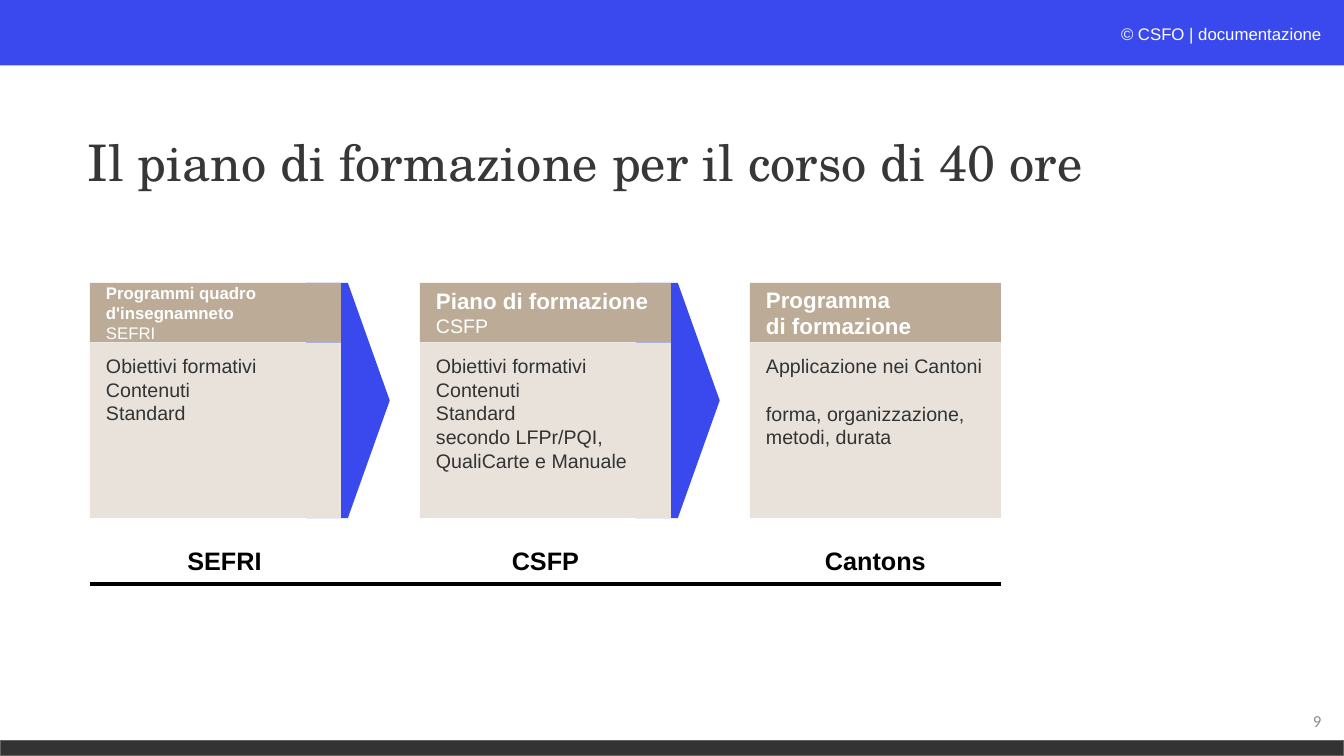
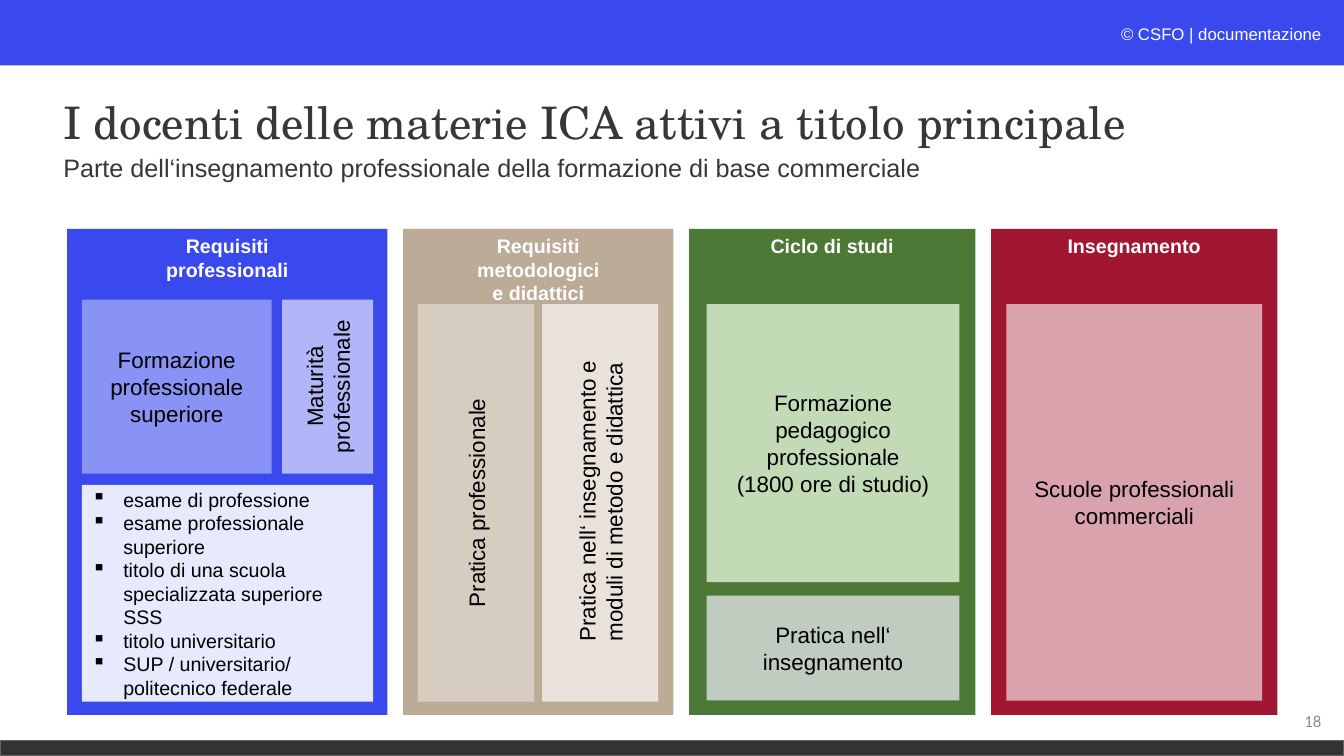
from dataclasses import dataclass, field
from typing import Any, Optional

import lxml.etree
import pptx
import pptx.dml.color
import pptx.enum.shapes
import pptx.enum.text
import pptx.oxml.ns
import pptx.util

Pt = pptx.util.Pt
RGB = pptx.dml.color.RGBColor
SHAPE = pptx.enum.shapes.MSO_SHAPE
ALIGN = pptx.enum.text.PP_ALIGN
ANCHOR = pptx.enum.text.MSO_ANCHOR
qn = pptx.oxml.ns.qn

# Colours
BLUE = RGB(0x3A, 0x49, 0xEE)
BLUE_MID = RGB(0x89, 0x92, 0xF5)
BLUE_SOFT = RGB(0xB0, 0xB6, 0xF8)
BLUE_PALE = RGB(0xE7, 0xE9, 0xFD)
SAND = RGB(0xBC, 0xAB, 0x96)
SAND_SOFT = RGB(0xD6, 0xCC, 0xBF)
SAND_PALE = RGB(0xE8, 0xE2, 0xDB)
GREEN = RGB(0x4C, 0x79, 0x36)
GREEN_SOFT = RGB(0xC2, 0xDA, 0xB6)
GREEN_GREY = RGB(0xC0, 0xCC, 0xBF)
RED = RGB(0xA1, 0x17, 0x31)
RED_SOFT = RGB(0xDA, 0xA2, 0xAD)
DARK = RGB(0x33, 0x33, 0x33)
DARK_EDGE = RGB(0x66, 0x63, 0x60)
TITLE_GREY = RGB(0x37, 0x37, 0x37)
NUMBER_GREY = RGB(0x8C, 0x8C, 0x8C)
OFF_WHITE = RGB(0xFC, 0xFD, 0xFE)
WHITE = RGB(0xFF, 0xFF, 0xFF)
BLACK = RGB(0, 0, 0)

PAGE_WIDTH, PAGE_HEIGHT = 960, 540
Area = tuple[float, float, float, float]  # left, top, width, height


def style(size: float, color: RGB, **extra: Any) -> dict[str, Any]:
    return {"name": "Arial", "size": Pt(size), "color": color, **extra}


HEADING = style(14, WHITE, bold=True)
CARD_HEAD = style(16, WHITE, bold=True)
CARD_HEAD_SMALL = style(12, WHITE, bold=True)
CARD_TEXT = style(14, DARK)
TILE_TEXT = style(16, BLACK)
LIST_TEXT = style(14, BLACK)
LABEL = style(18, BLACK, bold=True)
SUBTITLE = style(18, TITLE_GREY)
FOOTER = style(12, WHITE)
MARK = style(12, OFF_WHITE, italic=True)
NUMBER = style(12, NUMBER_GREY, name="Calibri")


@dataclass
class Line:
    """One paragraph made of (text, style) spans."""
    spans: list[tuple[str, dict[str, Any]]]
    format: dict[str, Any] = field(default_factory=dict)
    indent: float = 0
    bullet: str = ""


@dataclass
class Card:
    header: list[Line]
    body: list[Line]
    label: str
    label_shift: float = 0


@dataclass
class Tile:
    area: Area
    fill: RGB
    lines: list[Line]
    vertical: bool = False


@dataclass
class Column:
    width: float
    fill: RGB
    heading: list[str]
    tiles: list[Tile]


def lines_of(texts: list[str], look: dict[str, Any], align: Optional[ALIGN] = ALIGN.LEFT,
             **extra: Any) -> list[Line]:
    return [Line([(text, look)], {"alignment": align}, **extra) for text in texts]


def centred(*texts: str) -> list[Line]:
    return lines_of(list(texts), TILE_TEXT, ALIGN.CENTER)


def write(box: Any, lines: list[Line], **frame_format: Any) -> None:
    frame = box.text_frame
    for name, value in {"word_wrap": True, **frame_format}.items():
        setattr(frame, name, value)
    for index, line in enumerate(lines):
        para = frame.paragraphs[0] if index == 0 else frame.add_paragraph()
        for name, value in line.format.items():
            setattr(para, name, value)
        if line.indent:
            properties = para._p.get_or_add_pPr()
            properties.set("marL", str(Pt(line.indent)))
            if line.bullet:
                properties.set("indent", str(-Pt(line.indent)))
                mark = lxml.etree.SubElement(properties, qn("a:buChar"))
                mark.set("char", line.bullet)
        for text, look in line.spans:
            span = para.add_run()
            span.text = text
            for name, value in look.items():
                if name == "color":
                    span.font.color.rgb = value
                else:
                    setattr(span.font, name, value)


def add_text(page: Any, area: Area, lines: list[Line], **frame_format: Any) -> None:
    write(page.shapes.add_textbox(*map(Pt, area)), lines, **frame_format)


def add_block(page: Any, area: Area, fill: RGB, kind: SHAPE = SHAPE.RECTANGLE) -> Any:
    box = page.shapes.add_shape(kind, *map(Pt, area))
    box.shadow.inherit = False
    box.fill.solid()
    box.fill.fore_color.rgb = fill
    box.line.fill.background()
    return box


# Shared parts: bands, copyright line, title, page number
def add_page(deck: Any, title: str, title_area: Area, title_size: float, number: int) -> Any:
    page = deck.slides.add_slide(deck.slide_layouts[6])
    add_block(page, (0, 0, PAGE_WIDTH, 46.7), BLUE)
    band = add_block(page, (0, 529, PAGE_WIDTH, 11), DARK)
    band.line.color.rgb = DARK_EDGE
    band.line.width = Pt(1)
    add_text(page, (620.6, 13.6, 330.5, 21.8),
             [Line([("© ", MARK), ("CSFO | documentazione", FOOTER)], {"alignment": ALIGN.RIGHT})])
    look = style(title_size, TITLE_GREY, name="TeX Gyre Schola")
    add_text(page, title_area, [Line([(title, look)], {"line_spacing": 0.9})],
             vertical_anchor=ANCHOR.MIDDLE)
    add_text(page, (735, 500.5, 216, 28.8), lines_of([str(number)], NUMBER, ALIGN.RIGHT),
             vertical_anchor=ANCHOR.MIDDLE)
    return page


# Slide with three cards joined by arrowheads
def add_cards(page: Any, cards: list[Card]) -> None:
    left, top, width, pitch = 64.2, 202.1, 179.3, 235.7
    header_height, body_height = 42.4, 125.5
    insets = {"margin_left": Pt(11.5), "margin_right": Pt(7.2), "margin_bottom": Pt(3.6)}
    for index, card in enumerate(cards):
        x = left + index * pitch
        if index < len(cards) - 1:
            add_block(page, (x + 154.4, top, 59.8, header_height + body_height),
                      BLUE, SHAPE.PENTAGON)
        header = add_block(page, (x, top, width, header_height), SAND)
        write(header, card.header, vertical_anchor=ANCHOR.MIDDLE, margin_top=Pt(3.6), **insets)
        body = add_block(page, (x, top + header_height, width, body_height), SAND_PALE)
        write(body, card.body, vertical_anchor=ANCHOR.TOP, margin_top=Pt(8.6), **insets)
        add_text(page, (x + card.label_shift, 385.7, width, 29),
                 lines_of([card.label], LABEL, ALIGN.CENTER))
    end = left + (len(cards) - 1) * pitch + width
    rule = page.shapes.add_connector(pptx.enum.shapes.MSO_CONNECTOR.STRAIGHT,
                                     Pt(left), Pt(417.3), Pt(end), Pt(417.3))
    rule.line.color.rgb = BLACK
    rule.line.width = Pt(3)
    lxml.etree.SubElement(rule.element.spPr, qn("a:effectLst"))


# Slide with four columns of tiles
def add_columns(page: Any, columns: list[Column]) -> None:
    x, top, height, gap = 48, 163.5, 347.1, 11.2
    for column in columns:
        back = add_block(page, (x, top, column.width, height), column.fill)
        write(back, lines_of(column.heading, HEADING, ALIGN.CENTER), vertical_anchor=ANCHOR.TOP)
        for tile in column.tiles:
            shift, y, tile_width, tile_height = tile.area
            box = add_block(page, (x + shift, y, tile_width, tile_height), tile.fill)
            write(box, tile.lines, vertical_anchor=ANCHOR.MIDDLE)
            if tile.vertical:
                box.element.txBody.bodyPr.set("vert", "vert270")
        x += column.width + gap


GOALS = ["Obiettivi formativi", "Contenuti", "Standard"]
CARDS = [
    Card(lines_of(["Programmi quadro d'insegnamneto"], CARD_HEAD_SMALL)
         + lines_of(["SEFRI"], style(12, WHITE)),
         lines_of(GOALS, CARD_TEXT), "SEFRI", 6.5),
    Card(lines_of(["Piano di formazione"], CARD_HEAD) + lines_of(["CSFP"], style(14, WHITE)),
         lines_of(GOALS + ["secondo LFPr/PQI,", "QualiCarte e Manuale"], CARD_TEXT), "CSFP"),
    Card(lines_of(["Programma", "di formazione"], CARD_HEAD),
         [Line([("Applicazione nei Cantoni", CARD_TEXT)], {"alignment": ALIGN.LEFT}),
          Line([("forma, organizzazione,", CARD_TEXT)],
               {"alignment": ALIGN.LEFT, "space_before": Pt(17)}),
          Line([("metodi, durata", CARD_TEXT)], {"alignment": ALIGN.LEFT})], "Cantons"),
]

DIPLOMAS = ["esame di professione", "esame professionale superiore",
            "titolo di una scuola specializzata superiore SSS", "titolo universitario",
            "SUP / universitario/ politecnico federale"]
COLUMNS = [
    Column(228.8, BLUE, ["Requisiti", "professionali"], [
        Tile((10.5, 214, 135.5, 124.3), BLUE_MID, centred("Formazione professionale superiore")),
        Tile((153.5, 214, 65, 124.3), BLUE_SOFT, centred("Maturità professionale"), True),
        Tile((10.5, 346.4, 208, 154.8), BLUE_PALE,
             lines_of(DIPLOMAS, LIST_TEXT, indent=22.5, bullet="▪")),
    ]),
    Column(193, SAND, ["Requisiti", "metodologici", "e didattici"], [
        Tile((10.6, 217.2, 83, 284), SAND_SOFT, centred("Pratica professionale"), True),
        Tile((99.2, 217.2, 83, 284), SAND_PALE,
             lines_of(["Pratica nell‘ insegnamento e moduli di metodo e didattica"],
                      TILE_TEXT, indent=36), True),
    ]),
    Column(204.5, GREEN, ["Ciclo di studi"], [
        Tile((12.6, 217.2, 180.5, 198.6), GREEN_SOFT,
             centred("Formazione pedagogico professionale", "(1800 ore di studio)")),
        Tile((12.6, 425.4, 180.5, 75), GREEN_GREY, centred("Pratica nell‘ insegnamento")),
    ]),
    Column(204.5, RED, ["Insegnamento"], [
        Tile((10.9, 217.2, 182.8, 283.2), RED_SOFT, centred("Scuole professionali commerciali")),
    ]),
]


def main() -> None:
    deck = pptx.Presentation()
    deck.slide_width, deck.slide_height = Pt(PAGE_WIDTH), Pt(PAGE_HEIGHT)

    page = add_page(deck, "Il piano di formazione per il corso di 40 ore",
                    (55.5, 65.5, 780.5, 104.4), 36, 9)
    add_cards(page, CARDS)

    page = add_page(deck, "I docenti delle materie ICA attivi a titolo principale",
                    (38.1, 36.7, 864, 104.4), 32, 18)
    add_text(page, (38.1, 108, 634.3, 38.9),
             [Line([("Parte dell‘insegnamento professionale della formazione "
                     "di base commerciale", SUBTITLE)], {"line_spacing": 0.9})])
    add_columns(page, COLUMNS)

    deck.save("out.pptx")


if __name__ == "__main__":
    main()
